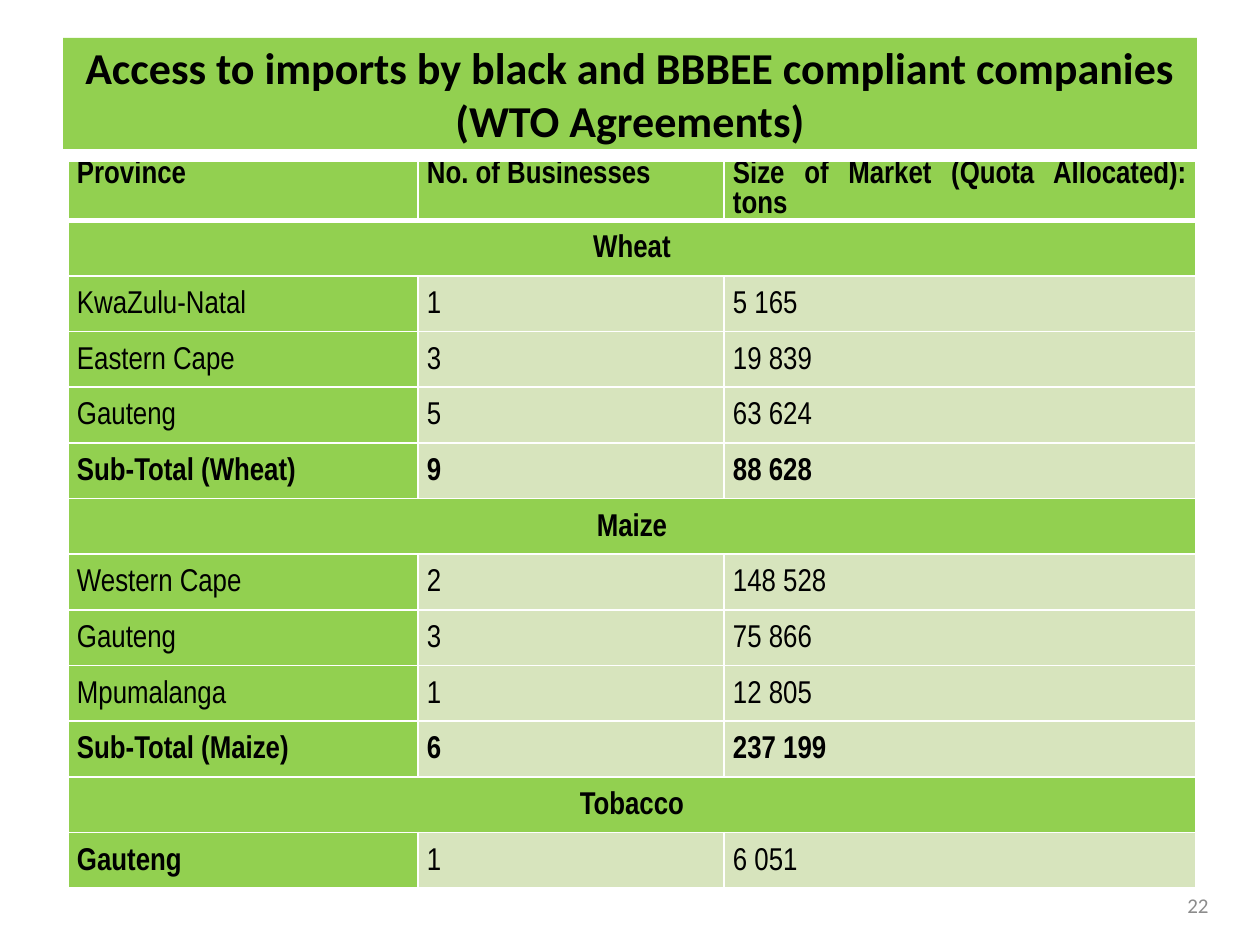
from lxml.etree import SubElement
from pptx import Presentation
from pptx.dml.color import RGBColor
from pptx.enum.text import MSO_ANCHOR, MSO_AUTO_SIZE, PP_ALIGN
from pptx.oxml.ns import qn
from pptx.util import Inches, Pt

PX = Inches(1) // 126
GREEN, PALE, WHITE, BLACK, GREY = "92D050", "D7E4BD", "FFFFFF", "000000", "8C8C8C"


def add_run(p, text, font, size, color, bold=False):
    r = p.add_run()
    r.text = text
    r.font.name = font
    r.font.size = Pt(size)
    r.font.bold = bold
    r.font.color.rgb = RGBColor.from_string(color)


def add_border(cell, side, width):
    ln = SubElement(cell._tc.get_or_add_tcPr(), qn(f"a:ln{side}"), w=str(Pt(width)))
    fill = SubElement(ln, qn("a:solidFill"))
    SubElement(fill, qn("a:srgbClr"), val=WHITE)


prs = Presentation()
prs.slide_width, prs.slide_height = Inches(10), Inches(7.5)
s = prs.slides.add_slide(prs.slide_layouts[5])

# Title band
title = s.shapes.title
title.left, title.top, title.width, title.height = 63 * PX, 38 * PX, 1134 * PX, 111 * PX
title.fill.solid()
title.fill.fore_color.rgb = RGBColor.from_string(GREEN)
tf = title.text_frame
tf.word_wrap = True
tf.auto_size = MSO_AUTO_SIZE.NONE
tf.vertical_anchor = MSO_ANCHOR.MIDDLE
p = tf.paragraphs[0]
p.alignment = PP_ALIGN.CENTER
add_run(p, "Access to imports by black and BBBEE compliant companies (WTO Agreements)",
        "Calibri", 25.2, BLACK, True)

# Quota table: a one-item row is a commodity heading across all columns
rows = [
    ("Province", "No. of Businesses", "Size of Market (Quota Allocated): tons"),
    ("Wheat",),
    ("KwaZulu-Natal", "1", "5 165"),
    ("Eastern Cape", "3", "19 839"),
    ("Gauteng", "5", "63 624"),
    ("Sub-Total (Wheat)", "9", "88 628"),
    ("Maize",),
    ("Western Cape", "2", "148 528"),
    ("Gauteng", "3", "75 866"),
    ("Mpumalanga", "1", "12 805"),
    ("Sub-Total (Maize)", "6", "237 199"),
    ("Tobacco",),
    ("Gauteng", "1", "6 051"),
]
col_widths = [350, 306, 472]
header_h, body_h = 59, 668
table = s.shapes.add_table(len(rows), 3, 68 * PX, 161 * PX, sum(col_widths) * PX,
                           (header_h + body_h) * PX).table
table.first_row = table.horz_banding = False
for col, width in zip(table.columns, col_widths):
    col.width = width * PX

for i, values in enumerate(rows):
    header, heading = i == 0, len(values) == 1
    table.rows[i].height = header_h * PX if header else body_h * PX // (len(rows) - 1)
    for j in range(3):
        cell = table.cell(i, j)
        cell.margin_left = cell.margin_right = 9 * PX
        cell.margin_top = cell.margin_bottom = 0
        for side in "LRTB":
            thick = (header and side == "B") or (i == 1 and side == "T")
            add_border(cell, side, 3 if thick else 1)
        cell.fill.solid()
        green = header or heading or j == 0
        cell.fill.fore_color.rgb = RGBColor.from_string(GREEN if green else PALE)
    if heading:
        table.cell(i, 0).merge(table.cell(i, 2))
    for j, text in enumerate(values):
        p = table.cell(i, j).text_frame.paragraphs[0]
        p.alignment = PP_ALIGN.CENTER if heading else PP_ALIGN.JUSTIFY
        if not header:
            p.line_spacing = 1.5
        last_province = i == len(rows) - 1 and j == 0
        bold = header or heading or last_province or values[0].startswith("Sub-Total")
        add_run(p, text, "Arial Narrow", 18, BLACK, bold)

# Slide number
tf = s.shapes.add_textbox(927 * PX, 880 * PX, 294 * PX, 50 * PX).text_frame
tf.word_wrap = True
tf.vertical_anchor = MSO_ANCHOR.MIDDLE
p = tf.paragraphs[0]
p.alignment = PP_ALIGN.RIGHT
add_run(p, "22", "Calibri", 12, GREY)

prs.save("out.pptx")
